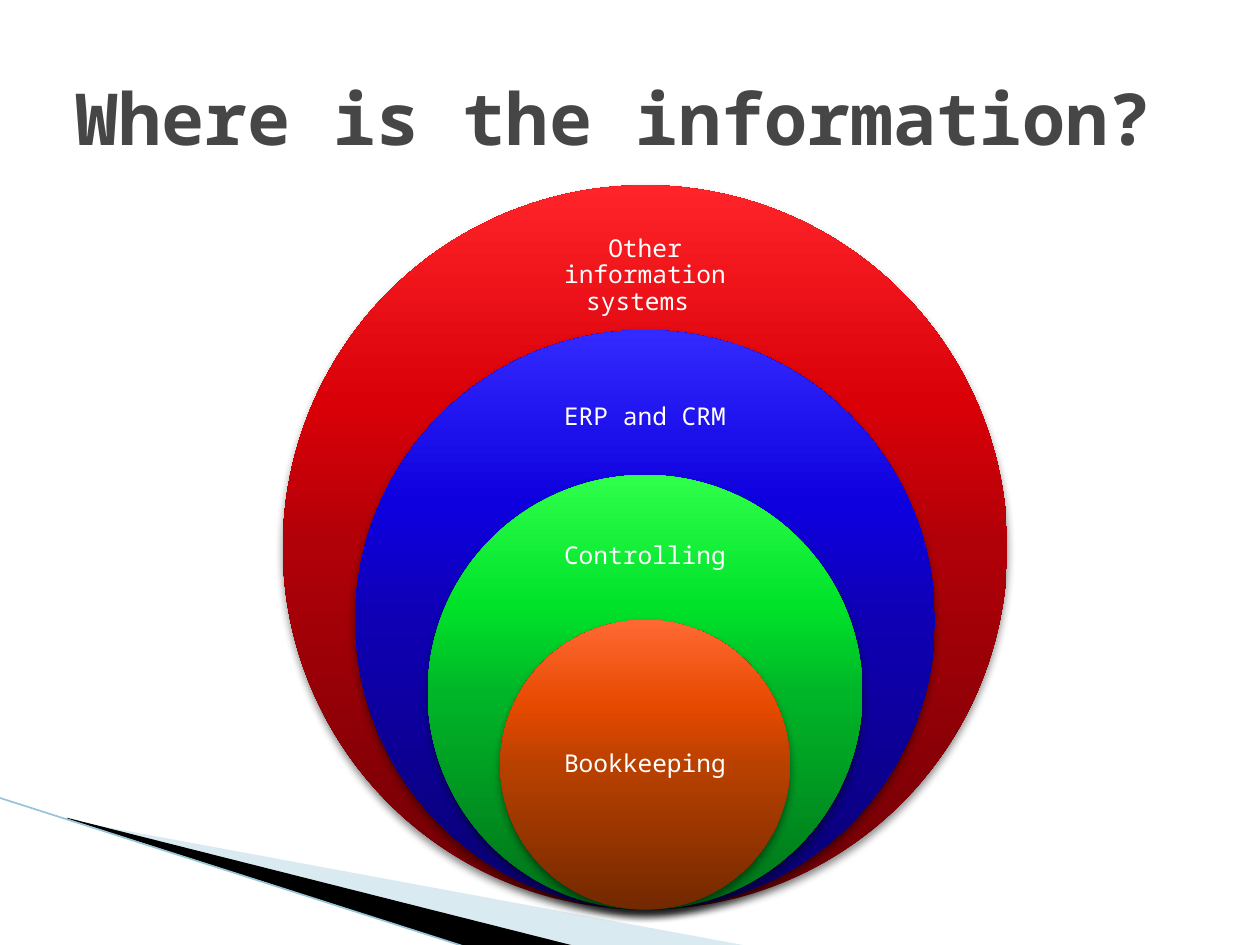
from lxml import etree
from pptx import Presentation
from pptx.dml.color import RGBColor
from pptx.enum.shapes import MSO_CONNECTOR, MSO_SHAPE
from pptx.enum.text import MSO_ANCHOR, PP_ALIGN
from pptx.oxml.ns import nsdecls, qn
from pptx.util import Inches, Pt

OVAL, STRAIGHT = MSO_SHAPE.OVAL, MSO_CONNECTOR.STRAIGHT
MIDDLE, LEFT, CENTER = MSO_ANCHOR.MIDDLE, PP_ALIGN.LEFT, PP_ALIGN.CENTER

FONT = "Noto Sans Mono"
TITLE_GREY = RGBColor(0x46, 0x46, 0x46)
WHITE = RGBColor(0xFF, 0xFF, 0xFF)
BLACK = RGBColor(0x00, 0x00, 0x00)
PALE_BLUE = RGBColor(0xA0, 0xCB, 0xDC)
LINE_BLUE = RGBColor(0x97, 0xC5, 0xD8)

# Content: rings from the outside in, with gradient colours from bottom to top
TITLE = "Where is the information?"
RINGS = [
    ("Other information systems ", ("6D0005", "B00008", "DA0008", "FF2429")),
    ("ERP and CRM", ("09006F", "0F00B3", "0E00DE", "332AFF")),
    ("Controlling", ("007119", "00B628", "00E22A", "2FFF4B")),
    ("Bookkeeping", ("732800", "B94100", "E64900", "FF6933")),
]
STOPS = (0, 50, 70, 100)
# Label top and height as shares of the ring's diameter
LABEL_SHARES = [(0.05, 0.15), (0.06, 0.18), (0.075, 0.225), (0.25, 0.5)]

# Layout in inches
CENTER_X, BASE_Y = 5.12, 7.22
OUTER, STEP = 5.75, 1.15
LABEL_WIDTH = 0.28 * OUTER
LABEL_INSET = 0.11

# Corner decoration: points, colour, opacity in percent
WEDGES = [
    ([(0.55, 6.51), (5.95, 7.51), (4.56, 7.51), (0.55, 6.5)], PALE_BLUE, 40),
    ([(0.53, 6.49), (4.57, 7.51), (3.72, 7.52), (0.54, 6.5)], BLACK, 100),
]
EDGE = (-0.01, 6.33, 3.71, 7.52)


def set_format(target, values):
    for name, value in values.items():
        setattr(target, name, value)


def write(frame, text, align, size, color, bold=False):
    set_format(frame, {"word_wrap": True, "vertical_anchor": MIDDLE})
    paragraph = frame.paragraphs[0]
    paragraph.alignment = align
    run = paragraph.add_run()
    run.text = text
    set_format(run.font, {"name": FONT, "size": Pt(size), "bold": bold})
    run.font.color.rgb = color
    return paragraph


def add_wedge(slide, points, color, opacity):
    corners = [(Inches(x), Inches(y)) for x, y in points]
    builder = slide.shapes.build_freeform(*corners[0], scale=1.0)
    builder.add_line_segments(corners[1:], close=True)
    wedge = builder.convert_to_shape()
    wedge.shadow.inherit = False
    wedge.line.fill.background()
    wedge.fill.solid()
    wedge.fill.fore_color.rgb = color
    if opacity < 100:
        srgb = wedge._element.spPr.find(qn("a:solidFill")).find(qn("a:srgbClr"))
        etree.SubElement(srgb, qn("a:alpha"), val=str(opacity * 1000))


def add_edge(slide):
    edge = slide.shapes.add_connector(STRAIGHT, *map(Inches, EDGE))
    edge.line.color.rgb = LINE_BLUE
    edge.line.width = Pt(0.95)
    etree.SubElement(edge._element.spPr, qn("a:effectLst"))


def shade(ring, colors):
    """Fill upwards through four colours and cast a soft shadow below."""
    ring.shadow.inherit = False
    ring.line.fill.background()
    ring.fill.gradient()
    properties = ring._element.spPr
    stops = "".join(
        f'<a:gs pos="{stop * 1000}"><a:srgbClr val="{color}"/></a:gs>'
        for stop, color in zip(STOPS, colors))
    gradient = etree.fromstring(
        f'<a:gradFill {nsdecls("a")} rotWithShape="1"><a:gsLst>{stops}</a:gsLst>'
        '<a:lin ang="16200000" scaled="0"/></a:gradFill>')
    properties.replace(properties.find(qn("a:gradFill")), gradient)
    shadow = etree.SubElement(
        properties.find(qn("a:effectLst")), qn("a:outerShdw"),
        blurRad=str(Pt(5)), dist=str(Pt(3)), dir="5400000", rotWithShape="0")
    black = etree.SubElement(shadow, qn("a:srgbClr"), val="000000")
    etree.SubElement(black, qn("a:alpha"), val="45000")


def add_ring(slide, index, text, colors):
    diameter = OUTER - index * STEP
    top = BASE_Y - diameter
    ring = slide.shapes.add_shape(
        OVAL, Inches(CENTER_X - diameter / 2), Inches(top),
        Inches(diameter), Inches(diameter))
    shade(ring, colors)

    offset, height = (share * diameter for share in LABEL_SHARES[index])
    label = slide.shapes.add_textbox(
        Inches(CENTER_X - LABEL_WIDTH / 2), Inches(top + offset),
        Inches(LABEL_WIDTH), Inches(height))
    set_format(label.text_frame, {
        f"margin_{side}": Inches(LABEL_INSET)
        for side in ("left", "top", "right", "bottom")})
    paragraph = write(label.text_frame, text, CENTER, 14, WHITE)
    set_format(paragraph, {"line_spacing": 0.9, "space_after": Pt(4.9)})


def main():
    deck = Presentation()
    set_format(deck, {"slide_width": Inches(10), "slide_height": Inches(7.5)})
    slide = deck.slides.add_slide(deck.slide_layouts[5])

    # Corner decoration
    for wedge in WEDGES:
        add_wedge(slide, *wedge)
    add_edge(slide)

    # Title, in front of the decoration
    title = slide.shapes.title
    set_format(title, {"left": Inches(0.5), "top": Inches(0.3),
                       "width": Inches(9), "height": Inches(1.25)})
    write(title.text_frame, TITLE, LEFT, 41, TITLE_GREY, bold=True)
    slide.shapes._spTree.append(title._element)

    # Nested rings
    for index, (text, colors) in enumerate(RINGS):
        add_ring(slide, index, text, colors)

    deck.save("out.pptx")


if __name__ == "__main__":
    main()
